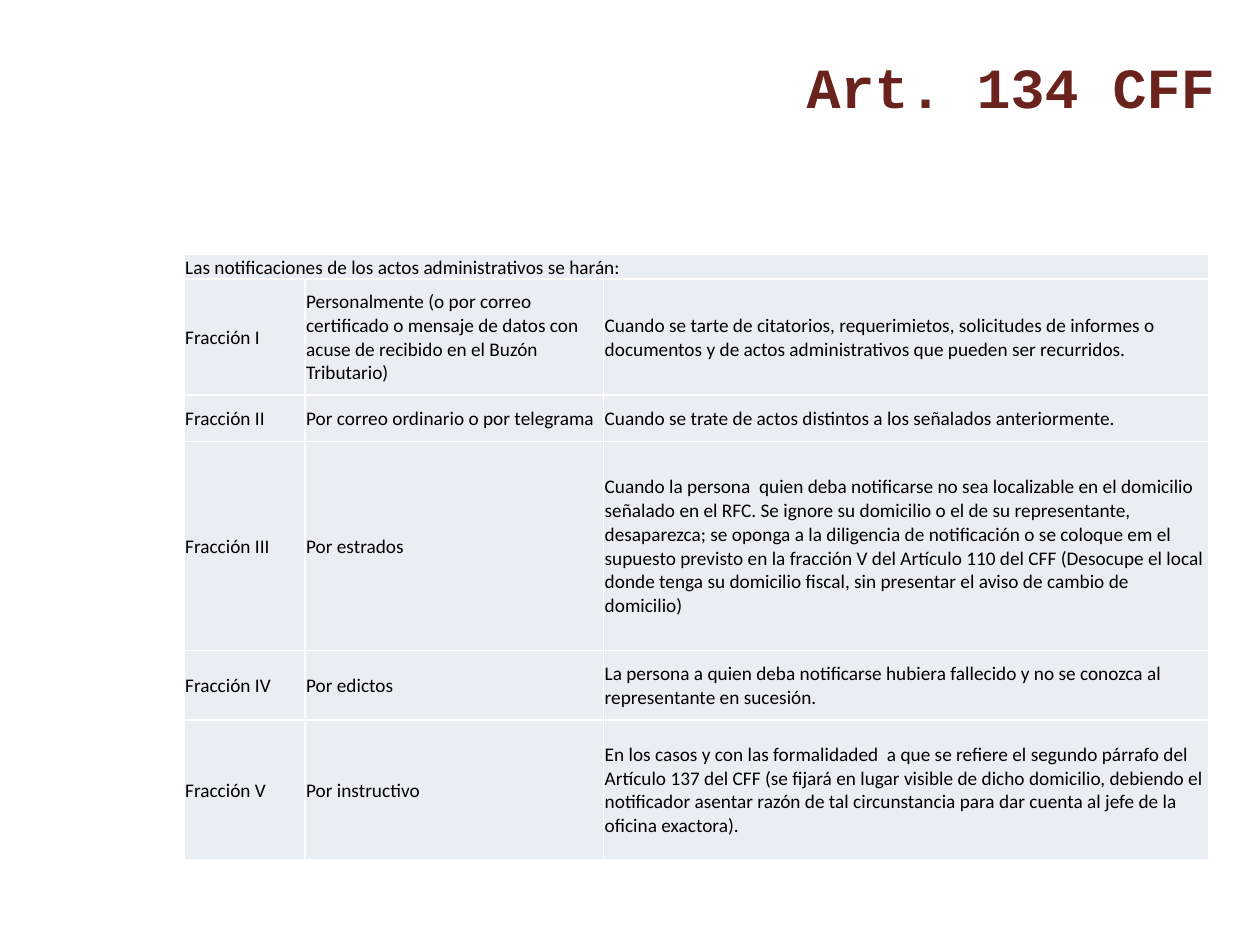
from lxml.etree import SubElement
from pptx import Presentation
from pptx.dml.color import RGBColor
from pptx.enum.text import MSO_ANCHOR, PP_ALIGN
from pptx.oxml.ns import qn
from pptx.util import Inches, Pt

TITLE = "Art. 134 CFF"
HEAD = "Las notificaciones de los actos administrativos se harán:"
ROWS = [
    ("Fracción I",
     "Personalmente (o por correo certificado o mensaje de datos con acuse "
     "de recibido en el Buzón Tributario)",
     "Cuando se tarte de citatorios, requerimietos, solicitudes de informes o "
     "documentos y de actos administrativos que pueden ser recurridos."),
    ("Fracción II",
     "Por correo ordinario o por telegrama",
     "Cuando se trate de actos distintos a los señalados anteriormente."),
    ("Fracción III",
     "Por estrados",
     "Cuando la persona  quien deba notificarse no sea localizable en el "
     "domicilio señalado en el RFC. Se ignore su domicilio o el de su "
     "representante, desaparezca; se oponga a la diligencia de notificación o "
     "se coloque em el supuesto previsto en la fracción V del Artículo 110 "
     "del CFF (Desocupe el local donde tenga su domicilio fiscal, sin "
     "presentar el aviso de cambio de domicilio)"),
    ("Fracción IV",
     "Por edictos",
     "La persona a quien deba notificarse hubiera fallecido y no se conozca "
     "al representante en sucesión."),
    ("Fracción V",
     "Por instructivo",
     "En los casos y con las formalidaded  a que se refiere el segundo "
     "párrafo del Artículo 137 del CFF (se fijará en lugar visible de dicho "
     "domicilio, debiendo el notificador asentar razón de tal circunstancia "
     "para dar cuenta al jefe de la oficina exactora)."),
]
WIDTHS = [0.96, 2.37, 4.8]
HEIGHTS = [0.18, 0.92, 0.37, 1.66, 0.55, 1.11]
LEFT, TOP = 1.46, 2.02

MAROON = RGBColor(0x6A, 0x22, 0x1D)
BLACK = RGBColor(0, 0, 0)
PALE = RGBColor(0xE9, 0xED, 0xF4)
WHITE = RGBColor(0xFF, 0xFF, 0xFF)


def style(para, name, size, color, bold=False):
    font = para.runs[0].font
    font.name, font.size, font.bold = name, Pt(size), bold
    font.color.rgb = color


def edge(cell):
    """Draw a thin white border on all four sides; call before the fill."""
    props = cell._tc.get_or_add_tcPr()
    for side in ("a:lnL", "a:lnR", "a:lnT", "a:lnB"):
        line = SubElement(props, qn(side), w=str(Pt(1)))
        fill = SubElement(line, qn("a:solidFill"))
        SubElement(fill, qn("a:srgbClr"), val=str(WHITE))


def dress(cell, text, anchor):
    edge(cell)
    cell.fill.solid()
    cell.fill.fore_color.rgb = PALE
    cell.margin_left = cell.margin_right = cell.margin_top = Inches(0.01)
    cell.margin_bottom = 0
    cell.vertical_anchor = anchor
    para = cell.text_frame.paragraphs[0]
    para.text = text
    if text:
        style(para, "Calibri", 11, BLACK)
    else:
        para.font.size = Pt(11)


def add_title(slide):
    box = slide.shapes.add_textbox(
        Inches(6.02), Inches(0.29), Inches(3.72), Inches(0.78))
    frame = box.text_frame
    frame.word_wrap = True
    frame.vertical_anchor = MSO_ANCHOR.MIDDLE
    para = frame.paragraphs[0]
    para.text = TITLE
    para.alignment = PP_ALIGN.RIGHT
    style(para, "Courier New", 32.4, MAROON, bold=True)


def add_grid(slide):
    grid = slide.shapes.add_table(
        len(HEIGHTS), len(WIDTHS), Inches(LEFT), Inches(TOP),
        Inches(sum(WIDTHS)), Inches(sum(HEIGHTS))).table
    for col, width in zip(grid.columns, WIDTHS):
        col.width = Inches(width)
    for row, height in zip(grid.rows, HEIGHTS):
        row.height = Inches(height)
    grid.first_row = grid.horz_banding = False
    for r, texts in enumerate([(HEAD, "", "")] + ROWS):
        anchor = MSO_ANCHOR.MIDDLE if r else MSO_ANCHOR.BOTTOM
        for c, text in enumerate(texts):
            dress(grid.cell(r, c), text, anchor)
    grid.cell(0, 0).merge(grid.cell(0, len(WIDTHS) - 1))


def main():
    deck = Presentation()
    deck.slide_width, deck.slide_height = Inches(10), Inches(7.5)
    slide = deck.slides.add_slide(deck.slide_layouts[6])
    add_title(slide)
    add_grid(slide)
    deck.save("out.pptx")


if __name__ == "__main__":
    main()
